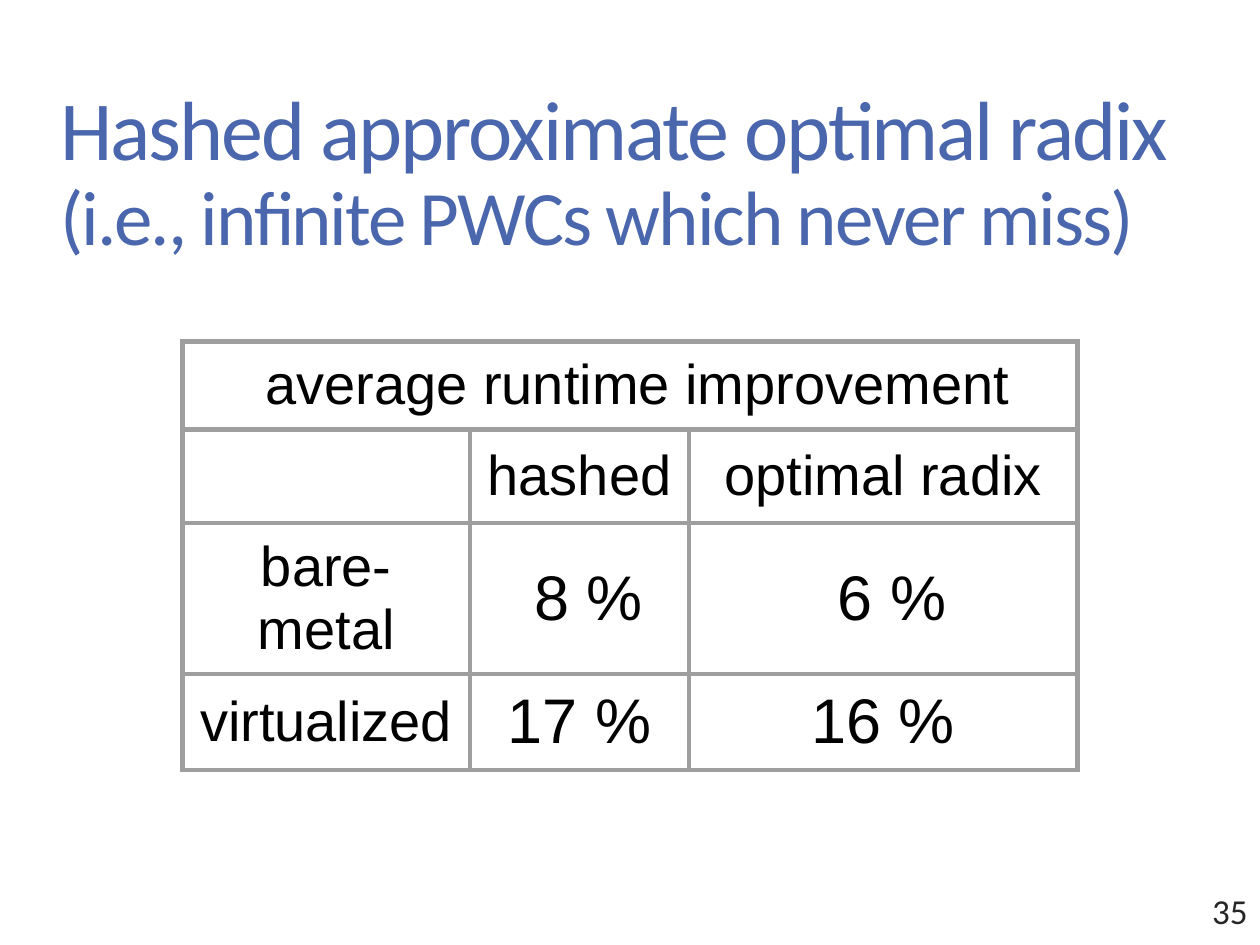
from pptx import Presentation
from pptx.dml.color import RGBColor
from pptx.enum.text import MSO_ANCHOR as Anchor, MSO_AUTO_SIZE as AutoSize, PP_ALIGN as Align
from pptx.oxml import parse_xml
from pptx.oxml.ns import nsdecls
from pptx.util import Inches, Pt

COLORS = {"title": "4A66AC", "body": "000000", "number": "262626",
          "border": "9E9E9E", "paper": "FFFFFF"}


def write(paragraph, text, size, color, font="Arial", align=Align.CENTER, spacing=None):
    """Append a formatted run; spacing is the letter spacing in points."""
    paragraph.alignment = align
    run = paragraph.add_run()
    run.text = text
    run.font.size = Pt(size)
    run.font.name = font
    run.font.color.rgb = RGBColor.from_string(COLORS[color])
    if spacing is not None:
        run.font._element.set("spc", str(round(spacing * 100)))


def draw_borders(cell, width=3):
    properties = cell._tc.get_or_add_tcPr()
    for position, side in enumerate(("lnL", "lnR", "lnT", "lnB")):
        properties.insert(position, parse_xml(
            f'<a:{side} {nsdecls("a")} w="{Pt(width)}"><a:solidFill>'
            f'<a:srgbClr val="{COLORS["border"]}"/></a:solidFill></a:{side}>'))


prs = Presentation()
prs.slide_width, prs.slide_height = Inches(10), Inches(7.5)
slide = prs.slides.add_slide(prs.slide_layouts[5])

# Title
title = slide.shapes.title
title.left, title.top = Inches(0.34), Inches(0.6)
title.width, title.height = Inches(9.32), Inches(0.89)
heading = title.text_frame
heading.auto_size = AutoSize.NONE
heading.word_wrap = True
heading.vertical_anchor = Anchor.TOP
heading.margin_left = heading.margin_right = Inches(0.1)
heading.margin_top = heading.margin_bottom = Inches(0.1)
headline = heading.paragraphs[0]
headline.line_spacing = 0.9
headline._p.get_or_add_pPr().set("marL", str(Inches(0.04)))
title_format = dict(color="title", font="Calibri", align=Align.LEFT, spacing=-1.2)
write(headline, "Hashed approximate optimal radix", 48, **title_format)
headline.add_line_break()
write(headline, "(i.e., infinite PWCs which never miss)", 44, **title_format)

# Runtime improvements
improvements = [
    [" average runtime improvement", "", ""],
    ["", "hashed", "optimal radix"],
    ["bare-metal", " 8 %", " 6 %"],
    ["virtualized", "17 %", "16 %"],
]
column_widths = [2.28, 1.74, 3.08]
row_heights = [0.7, 0.74, 1.2, 0.76]
table = slide.shapes.add_table(
    len(row_heights), len(column_widths), Inches(1.45), Inches(2.71),
    Inches(sum(column_widths)), Inches(sum(row_heights))).table
table.first_row = table.horz_banding = False
for column, width in zip(table.columns, column_widths):
    column.width = Inches(width)
for row, height in zip(table.rows, row_heights):
    row.height = Inches(height)
table.cell(0, 0).merge(table.cell(0, 2))

for r, labels in enumerate(improvements):
    for c, label in enumerate(labels):
        cell = table.cell(r, c)
        cell.fill.solid()
        cell.fill.fore_color.rgb = RGBColor.from_string(COLORS["paper"])
        cell.vertical_anchor = Anchor.MIDDLE
        cell.margin_left = cell.margin_right = Inches(0.1)
        cell.margin_top = cell.margin_bottom = Inches(0.1)
        draw_borders(cell)
        if label:
            size = 36 if "%" in label else 32
            write(cell.text_frame.paragraphs[0], label, size, "body")

# Page number
page_number = slide.shapes.add_textbox(
    Inches(9.38), Inches(7.01), Inches(0.62), Inches(0.44)).text_frame
page_number.word_wrap = True
write(page_number.paragraphs[0], "35", 20, "number", font="Calibri", align=Align.RIGHT)

prs.save("out.pptx")
